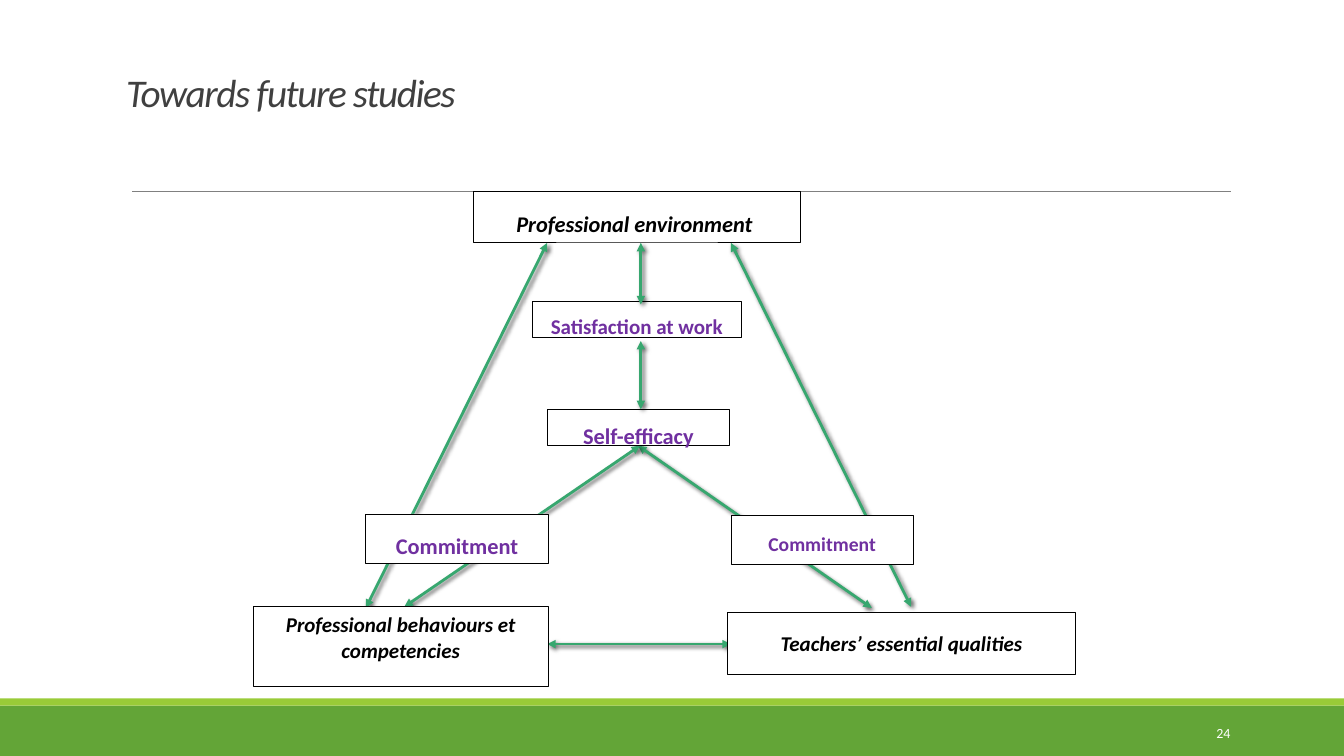
"""Build the slide on future studies: a triangle of linked concepts."""
from dataclasses import dataclass

from lxml.etree import SubElement
from pptx import Presentation
from pptx.dml.color import RGBColor
from pptx.enum.shapes import MSO_CONNECTOR, MSO_SHAPE
from pptx.enum.text import MSO_ANCHOR, PP_ALIGN
from pptx.oxml import parse_xml
from pptx.oxml.ns import nsdecls, qn
from pptx.util import Cm, Pt


@dataclass(frozen=True)
class Theme:
    font: str = "Calibri"
    title: RGBColor = RGBColor(0x40, 0x40, 0x40)
    pole: RGBColor = RGBColor(0, 0, 0)
    factor: RGBColor = RGBColor(0x70, 0x30, 0xA0)
    white: RGBColor = RGBColor(0xFF, 0xFF, 0xFF)
    footer: RGBColor = RGBColor(0x63, 0xA5, 0x37)
    stripe: RGBColor = RGBColor(0x99, 0xCB, 0x38)
    rule: RGBColor = RGBColor(0x80, 0x80, 0x80)
    arrow: RGBColor = RGBColor(0x37, 0xA7, 0x6F)
    title_size: int = 28
    number_size: int = 10
    large: int = 16
    medium: int = 15
    small: int = 14
    thin: float = 0.5
    thick: float = 2


theme = Theme()
SHADOW = (
    f'<a:effectLst {nsdecls("a")}><a:outerShdw blurRad="38100" dist="25400" dir="2700000">'
    '<a:srgbClr val="000000"><a:alpha val="60000"/></a:srgbClr></a:outerShdw></a:effectLst>'
)


def write(shape, text, color, size, frame_format, paragraph_format, **font_format):
    """Fill a shape with one formatted paragraph."""
    frame = shape.text_frame
    frame.text = text
    paragraph = frame.paragraphs[0]
    font = paragraph.runs[0].font
    font.color.rgb = color
    margins = {f"margin_{side}": Cm(0.13) for side in ("left", "right", "top", "bottom")}
    font_format = {"name": theme.font, "size": Pt(size), **font_format}
    for target, values in (
        (frame, {"word_wrap": True, **margins, **frame_format}),
        (paragraph, paragraph_format),
        (font, font_format),
    ):
        for attribute, value in values.items():
            setattr(target, attribute, value)
    return font


def connect(start, end, color, width, arrow=True):
    """Draw a plain rule or a shadowed two-headed arrow."""
    line = slide.shapes.add_connector(MSO_CONNECTOR.STRAIGHT, *map(Cm, start + end))
    line.line.color.rgb = color
    line.line.width = Pt(width)
    properties = line.line._get_or_add_ln()
    if arrow:
        for tip in ("a:headEnd", "a:tailEnd"):
            SubElement(properties, qn(tip), type="triangle")
    effects = SHADOW if arrow else f'<a:effectLst {nsdecls("a")}/>'
    properties.getparent().append(parse_xml(effects))


deck = Presentation()
deck.slide_width, deck.slide_height = Cm(33.87), Cm(19.05)
slide = deck.slides.add_slide(deck.slide_layouts[5])

for top, height, color in ((17.78, 1.27, theme.footer), (17.6, 0.18, theme.stripe)):
    band = slide.shapes.add_shape(MSO_SHAPE.RECTANGLE, 0, Cm(top), deck.slide_width, Cm(height))
    band.shadow.inherit = False
    band.fill.solid()
    band.fill.fore_color.rgb = color
    band.line.fill.background()
connect((3.33, 4.83), (31.01, 4.83), theme.rule, theme.thin, arrow=False)

heading = slide.shapes.title
heading.left, heading.top, heading.width, heading.height = map(Cm, (3.05, 0.79, 27.94, 2.24))
heading_font = write(
    heading, "Towards future studies", theme.title, theme.title_size,
    {"vertical_anchor": MSO_ANCHOR.BOTTOM},
    {"alignment": PP_ALIGN.LEFT, "line_spacing": 0.85}, italic=True,
)
heading_font._element.set("spc", "-100")

page_number = slide.shapes.add_textbox(Cm(30.48), Cm(18.14), Cm(0.66), Cm(0.64))
write(
    page_number, "24", theme.white, theme.number_size,
    {"vertical_anchor": MSO_ANCHOR.MIDDLE, "word_wrap": False},
    {"alignment": PP_ALIGN.RIGHT},
)

outer_links = (
    ((9.22, 15.32), (13.79, 6.12)),
    ((18.42, 6.12), (22.96, 15.29)),
    ((21.97, 15.32), (16.08, 11.23)),
    ((10.19, 15.29), (16.13, 11.23)),
    ((13.79, 16.23), (18.42, 16.23)),
)
for start, end in outer_links:
    connect(start, end, theme.arrow, theme.thick)

concepts = (
    ("Professional environment ", (11.94, 4.83, 8.23, 1.27), theme.pole, theme.large, 1.5),
    ("Satisfaction at work", (13.41, 7.59, 5.28, 0.91), theme.factor, theme.medium, 1.5),
    ("Self-efficacy", (13.79, 10.31, 4.6, 0.91), theme.factor, theme.large, 1.5),
    ("Professional behaviours et competencies", (6.38, 15.29, 7.44, 2.01),
     theme.pole, theme.medium, 1.0),
    ("Teachers’ essential qualities", (18.34, 15.44, 8.76, 1.55),
     theme.pole, theme.medium, 1.5),
    ("Commitment", (9.22, 12.95, 4.6, 1.24), theme.factor, theme.large, 1.5),
    ("Commitment", (18.42, 12.98, 4.6, 1.24), theme.factor, theme.small, 1.5),
)
for label, bounds, color, size, spacing in concepts:
    concept = slide.shapes.add_shape(MSO_SHAPE.RECTANGLE, *map(Cm, bounds))
    concept.shadow.inherit = False
    concept.fill.solid()
    concept.fill.fore_color.rgb = theme.white
    concept.line.color.rgb = theme.pole
    concept.line.width = Pt(theme.thin)
    top_margin = Cm(0.13) if bounds[3] > 1 else 0
    write(
        concept, label, color, size,
        {"vertical_anchor": MSO_ANCHOR.TOP, "margin_top": top_margin, "margin_bottom": 0},
        {"alignment": PP_ALIGN.CENTER, "line_spacing": spacing},
        bold=True, italic=color == theme.pole,
    )

for top, bottom in ((8.59, 10.31), (6.12, 7.67)):
    connect((16.15, top), (16.15, bottom), theme.arrow, theme.thick)

deck.save("out.pptx")
